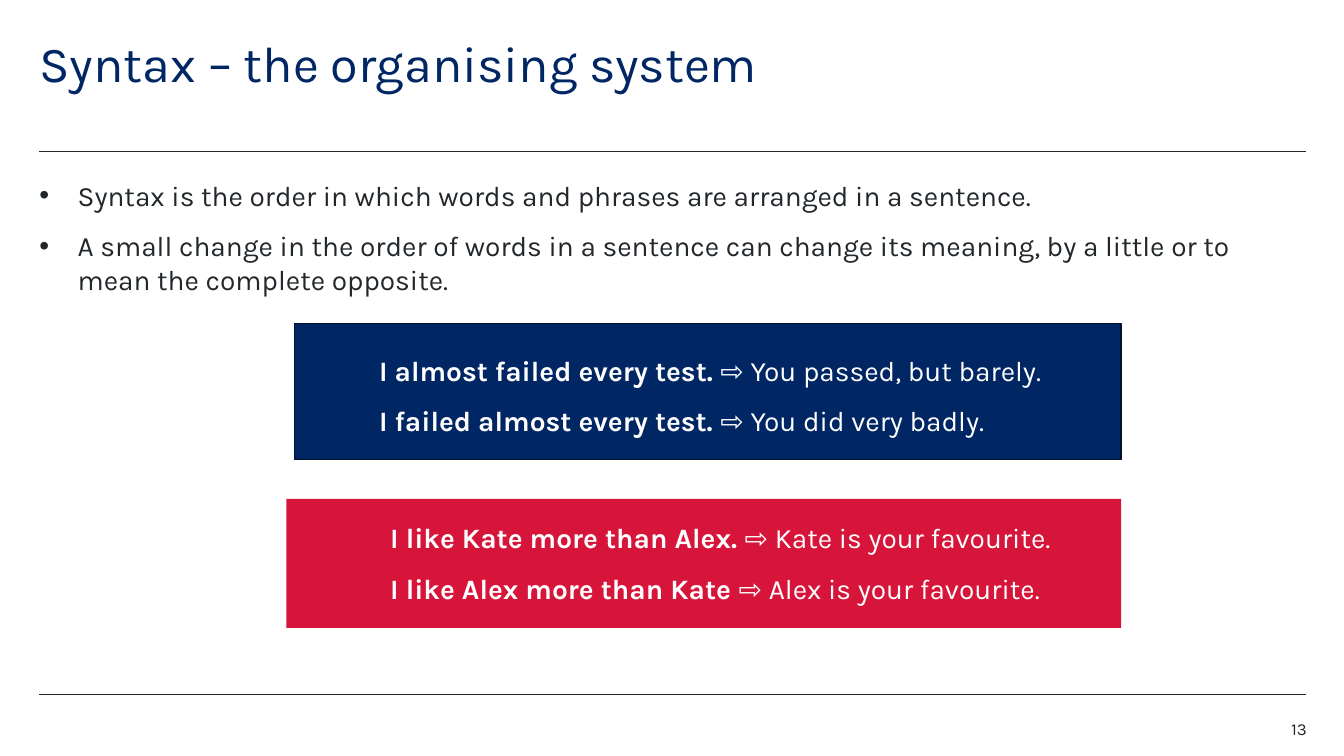
from pptx import Presentation
from pptx.dml.color import RGBColor
from pptx.enum.shapes import MSO_CONNECTOR, MSO_SHAPE
from pptx.enum.text import MSO_ANCHOR, PP_ALIGN
from pptx.oxml.ns import qn
from pptx.util import Inches, Pt
from lxml import etree

RECT = MSO_SHAPE.RECTANGLE
STRAIGHT = MSO_CONNECTOR.STRAIGHT
TOP = MSO_ANCHOR.TOP
LEFT = PP_ALIGN.LEFT
RIGHT = PP_ALIGN.RIGHT

HUES = {"navy": "002664", "edge": "00112C", "red": "D7153A",
        "ink": "22272B", "white": "FFFFFF"}
FONT = "Karla"
SIGN = "Cabin"


class Page:
    def __init__(self, deck):
        self.slide = deck.slides.add_slide(deck.slide_layouts[5])
        self.shapes = self.slide.shapes

    def hue(self, name):
        return RGBColor.from_string(HUES[name])

    def style(self, font, size, hue, bold=False, face=FONT):
        font.name = face
        font.size = Pt(size)
        font.bold = bold
        font.color.rgb = self.hue(hue)

    def run(self, para, text, size, hue, bold=False, face=FONT):
        run = para.add_run()
        run.text = text
        self.style(run.font, size, hue, bold, face)

    def frame(self, shape):
        frame = shape.text_frame
        frame.margin_left = frame.margin_right = 0
        frame.margin_top = frame.margin_bottom = 0
        frame.word_wrap = True
        frame.vertical_anchor = TOP
        return frame

    def box(self, x, y, w, h):
        return self.frame(self.shapes.add_textbox(
            Inches(x), Inches(y), Inches(w), Inches(h)))

    def lines(self, frame, count):
        for _ in range(count - 1):
            frame.add_paragraph()
        return frame.paragraphs

    def title(self, text, x, y, w, h):
        shape = self.shapes.title
        shape.left, shape.top = Inches(x), Inches(y)
        shape.width, shape.height = Inches(w), Inches(h)
        para = self.frame(shape).paragraphs[0]
        para.alignment = LEFT
        para.line_spacing = 0.9
        self.run(para, text, 36, "navy")

    def rule(self, y):
        line = self.shapes.add_connector(
            STRAIGHT, Inches(0.39), Inches(y), Inches(12.95), Inches(y))
        line.line.color.rgb = self.hue("ink")
        line.line.width = Pt(0.5)
        etree.SubElement(line._element.spPr, qn("a:effectLst"))

    def bullets(self, items, x, y, w, h):
        paras = self.lines(self.box(x, y, w, h), len(items))
        for para, text in zip(paras, items):
            props = para._p.get_or_add_pPr()
            props.set("marL", str(Inches(0.38)))
            props.set("indent", str(Inches(-0.38)))
            face = etree.SubElement(props, qn("a:buFont"))
            face.set("typeface", "Arial")
            mark = etree.SubElement(props, qn("a:buChar"))
            mark.set("char", "•")
            para.space_after = Pt(12)
            self.run(para, text, 20, "ink")

    def panel(self, x, y, w, h, fill, edge=None):
        shape = self.shapes.add_shape(
            RECT, Inches(x), Inches(y), Inches(w), Inches(h))
        shape.shadow.inherit = False
        shape.fill.solid()
        shape.fill.fore_color.rgb = self.hue(fill)
        if edge:
            shape.line.color.rgb = self.hue(edge)
            shape.line.width = Pt(1)
        else:
            shape.line.fill.background()

    def pairs(self, items, x, y, w, h):
        paras = self.lines(self.box(x, y, w, h), len(items))
        for para, (claim, sense) in zip(paras, items):
            para.line_spacing = 1.5
            self.run(para, claim + " ", 20, "white", True)
            self.run(para, "⇨", 20, "white", face=SIGN)
            self.run(para, " " + sense, 20, "white")

    def number(self, text, x, y, w, h):
        para = self.box(x, y, w, h).paragraphs[0]
        para.alignment = RIGHT
        self.run(para, text, 12, "ink")


def main():
    deck = Presentation()
    deck.slide_width = Inches(13.33)
    deck.slide_height = Inches(7.5)
    page = Page(deck)
    for y in (1.5, 6.89):
        page.rule(y)
    page.title("Syntax – the organising system", 0.39, 0.39, 11.02, 1.1)
    page.bullets([
        "Syntax is the order in which words and phrases are arranged "
        "in a sentence.",
        "A small change in the order of words in a sentence can change "
        "its meaning, by a little or to mean the complete opposite.",
    ], 0.39, 1.77, 12.56, 1.3)
    page.number("13", 12.17, 7.13, 0.79, 0.2)
    page.panel(2.92, 3.21, 8.2, 1.35, "navy", "edge")
    page.pairs([
        ("I almost failed every test.", "You passed, but barely."),
        ("I failed almost every test.", "You did very badly."),
    ], 3.76, 3.34, 7.06, 1)
    page.panel(2.84, 4.95, 8.28, 1.28, "red")
    page.pairs([
        ("I like Kate more than Alex.", "Kate is your favourite."),
        ("I like Alex more than Kate", "Alex is your favourite."),
    ], 3.87, 5, 6.7, 1.19)
    deck.save("out.pptx")


if __name__ == "__main__":
    main()
